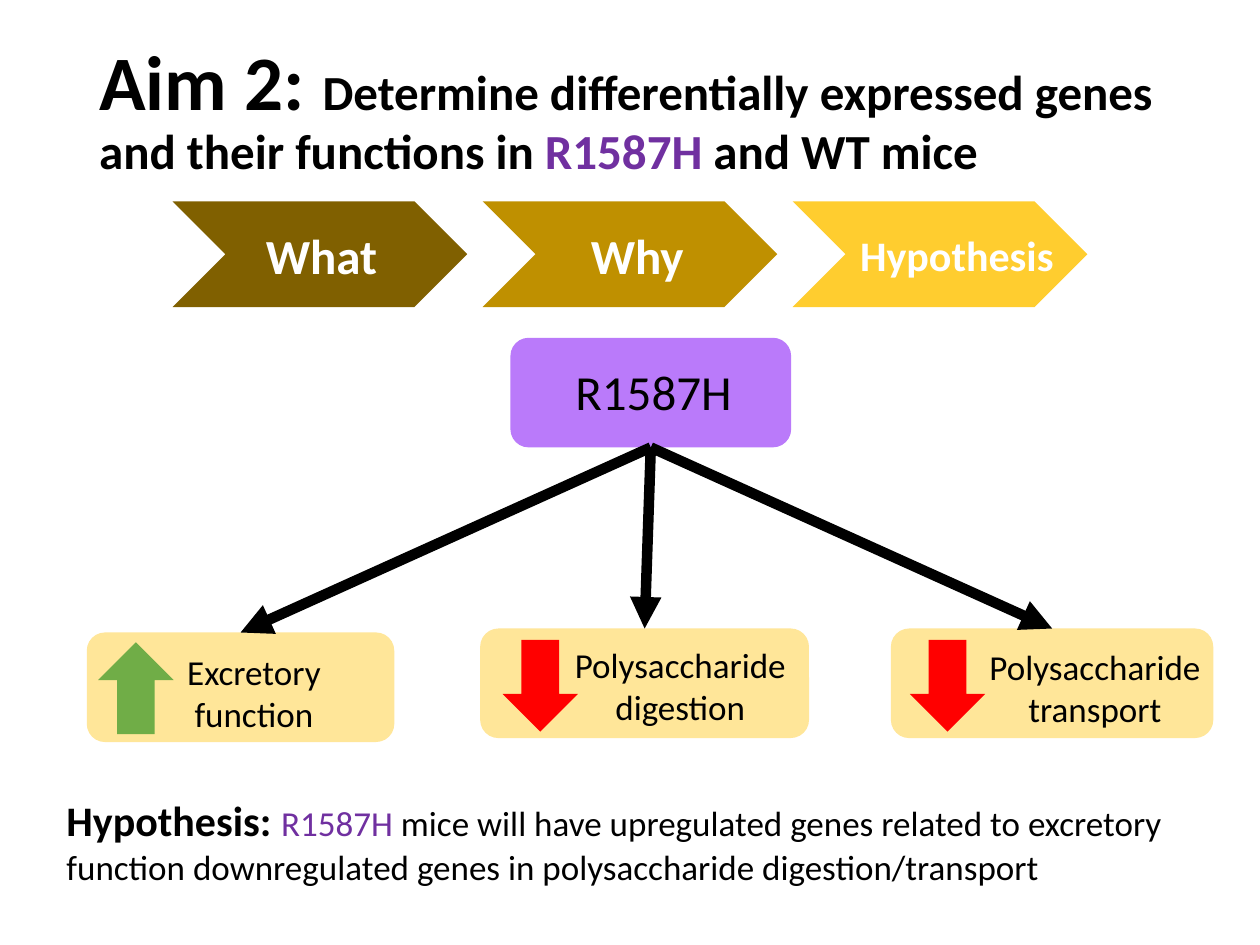
from lxml.etree import SubElement
from pptx import Presentation
from pptx.dml.color import RGBColor
from pptx.enum.shapes import MSO_CONNECTOR as Line, MSO_SHAPE as Shape
from pptx.enum.text import MSO_ANCHOR as Anchor, PP_ALIGN as Align
from pptx.oxml.ns import qn
from pptx.util import Cm, Pt

BLACK, WHITE, PURPLE = "000000", "FFFFFF", "7030A0"
LILAC, CREAM, GREEN, RED = "BA7AFA", "FFE699", "70AD47", "FF0000"


def color(value):
    return RGBColor.from_string(value)


class Painter:
    font = "Calibri"

    def __init__(self, page):
        self.page = page

    def text(self, left, top, width, height, spans, align=Align.LEFT,
             anchor=Anchor.TOP, spacing=1.0):
        box = self.page.shapes.add_textbox(Cm(left), Cm(top), Cm(width), Cm(height))
        frame = box.text_frame
        frame.word_wrap = True
        frame.vertical_anchor = anchor
        para = frame.paragraphs[0]
        para.alignment = align
        para.line_spacing = spacing
        for words, size, ink, bold in spans:
            span = para.add_run()
            span.text = words
            span.font.name = self.font
            span.font.size = Pt(size)
            span.font.bold = bold
            span.font.color.rgb = color(ink)

    def shape(self, kind, left, top, width, height, fill, rotation=0):
        shape = self.page.shapes.add_shape(kind, Cm(left), Cm(top), Cm(width), Cm(height))
        shape.shadow.inherit = False
        shape.fill.solid()
        shape.fill.fore_color.rgb = color(fill)
        shape.line.fill.background()
        shape.rotation = rotation
        return shape

    def arrow(self, source, target):
        link = self.page.shapes.add_connector(Line.STRAIGHT, 0, 0, 0, 0)
        link.begin_connect(source, 2)
        link.end_connect(target, 0)
        link.line.color.rgb = color(BLACK)
        link.line.width = Pt(6)
        SubElement(link.line._get_or_add_ln(), qn("a:tailEnd"), type="triangle")
        SubElement(link._element.spPr, qn("a:effectLst"))


def main():
    deck = Presentation()
    deck.slide_width, deck.slide_height = Cm(25.4), Cm(19.05)
    painter = Painter(deck.slides.add_slide(deck.slide_layouts[6]))

    painter.text(1.75, 0.41, 21.9, 3.68, [
        ("Aim 2: ", 44, BLACK, True),
        ("Determine differentially expressed genes and their functions in ", 28, BLACK, True),
        ("R1587H", 28, PURPLE, True),
        (" and WT mice", 28, BLACK, True),
    ], anchor=Anchor.MIDDLE, spacing=0.9)
    painter.text(1.09, 15.9, 23.24, 2.13, [
        ("Hypothesis: ", 24, BLACK, True),
        ("R1587H", 20, PURPLE, False),
        (" mice will have upregulated genes related to excretory function "
         "downregulated genes in polysaccharide digestion/transport", 20, BLACK, False),
    ])

    mutant = painter.shape(Shape.ROUNDED_RECTANGLE, 10.29, 6.81, 5.66, 2.21, LILAC)
    painter.text(11.35, 7.16, 3.84, 1.5, [("R1587H", 28, BLACK, False)])

    outcomes = [
        ("Excretory function", 1.75, 12.75, 6.2, 3.2, 12.98, 3.84, 1.98, 12.95, GREEN, 0),
        ("Polysaccharide digestion", 9.68, 12.67, 6.63, 11.2, 12.85, 5.03, 10.13, 12.9, RED, 180),
        ("Polysaccharide transport", 17.96, 12.67, 6.5, 19.56, 12.88, 5.03, 18.34, 12.9, RED, 180),
    ]
    for (words, left, top, width, text_left, text_top, text_width,
         sign_left, sign_top, fill, rotation) in outcomes:
        outcome = painter.shape(Shape.ROUNDED_RECTANGLE, left, top, width, 2.21, CREAM)
        painter.arrow(mutant, outcome)
        painter.text(text_left, text_top, text_width, 1.5,
                     [(words, 20, BLACK, False)], Align.CENTER)
        painter.shape(Shape.UP_ARROW, sign_left, sign_top, 1.52, 1.85, fill, rotation)

    steps = [
        ("What", "806000", 28, 5.11, 4.42, 3.28),
        ("Why", "BF9000", 28, 11.66, 4.42, 3.28),
        ("Hypothesis", "FFCD2F", 24, 17.09, 4.5, 4.62),
    ]
    for index, (words, fill, size, left, top, width) in enumerate(steps):
        painter.shape(Shape.CHEVRON, 3.48 + 6.25 * index, 4.06, 5.94, 2.13, fill)
        painter.text(left, top, width, 1.4, [(words, size, WHITE, True)])

    deck.save("out.pptx")


if __name__ == "__main__":
    main()
